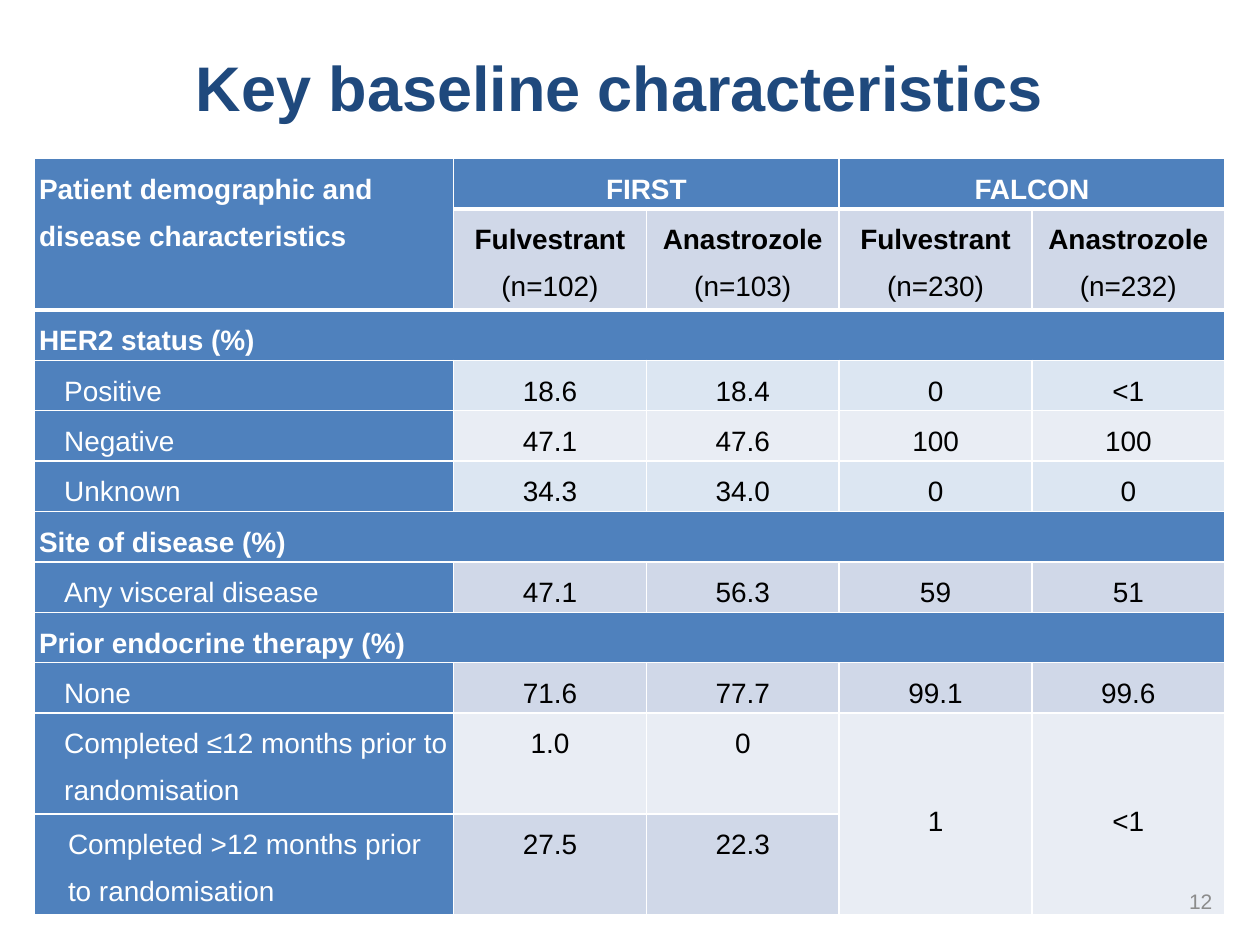
from dataclasses import dataclass

from lxml import etree
from pptx import Presentation
from pptx.dml.color import RGBColor
from pptx.enum import text as t
from pptx.oxml import ns
from pptx.util import Inches, Pt

WHITE = RGBColor(0xFF, 0xFF, 0xFF)
BLACK = RGBColor(0, 0, 0)
NAVY = RGBColor(0x1F, 0x49, 0x7D)
GREY = RGBColor(0x8C, 0x8C, 0x8C)
BLUE = RGBColor(0x4F, 0x81, 0xBD)
MIST = RGBColor(0xD0, 0xD8, 0xE8)
PALE = RGBColor(0xE9, 0xED, 0xF4)
SKY = RGBColor(0xDC, 0xE6, 0xF2)

LEFT, CENTER, RIGHT = t.PP_ALIGN.LEFT, t.PP_ALIGN.CENTER, t.PP_ALIGN.RIGHT
TOP, MIDDLE = t.MSO_ANCHOR.TOP, t.MSO_ANCHOR.MIDDLE

COLUMN_WIDTHS = [3.33] + [1.53] * 4
HEADER_ROWS = 2


@dataclass
class Section:
    heading: str


@dataclass
class Measure:
    label: str
    values: list[str]
    fill: RGBColor
    height: float = 0.39
    margin: float = 0.04


TRIALS = ["FIRST", "FALCON"]
ARMS = ["Fulvestrant\n(n=102)", "Anastrozole\n(n=103)",
        "Fulvestrant\n(n=230)", "Anastrozole\n(n=232)"]
BODY = [
    Section("HER2 status (%)"),
    Measure("Positive", ["18.6", "18.4", "0", "<1"], SKY),
    Measure("Negative", ["47.1", "47.6", "100", "100"], PALE),
    Measure("Unknown", ["34.3", "34.0", "0", "0"], SKY),
    Section("Site of disease (%)"),
    Measure("Any visceral disease", ["47.1", "56.3", "59", "51"], MIST),
    Section("Prior endocrine therapy (%)"),
    Measure("None", ["71.6", "77.7", "99.1", "99.6"], MIST, 0.4),
    Measure("Completed ≤12 months prior to randomisation", ["1.0", "0", "1", "<1"], PALE, 0.8),
    Measure("Completed >12 months prior to randomisation", ["27.5", "22.3"], MIST, 0.8, 0.07),
]


def write(frame, text: str, *, size=16, color=BLACK, bold=False, first_bold=False,
          align=LEFT, spacing=1.5, indent=0.0) -> None:
    for index, line in enumerate(text.split("\n")):
        paragraph = frame.paragraphs[0] if index == 0 else frame.add_paragraph()
        paragraph.alignment = align
        paragraph.line_spacing = spacing
        if indent:
            properties = paragraph._p.get_or_add_pPr()
            properties.set("marL", str(Inches(indent)))
            properties.set("indent", "0")
        run = paragraph.add_run()
        run.text = line
        run.font.name = "Arial"
        run.font.size = Pt(size)
        run.font.bold = bold or (first_bold and index == 0)
        run.font.color.rgb = color


def add_text(slide, left: float, top: float, width: float, height: float,
             text: str, **text_format) -> None:
    frame = slide.shapes.add_textbox(
        Inches(left), Inches(top), Inches(width), Inches(height)).text_frame
    frame.word_wrap = True
    frame.vertical_anchor = MIDDLE
    write(frame, text, **text_format)


def add_border(cell, side: str, points: float) -> None:
    line = etree.SubElement(cell._tc.get_or_add_tcPr(), ns.qn(f"a:ln{side}"), w=str(Pt(points)))
    solid = etree.SubElement(line, ns.qn("a:solidFill"))
    etree.SubElement(solid, ns.qn("a:srgbClr"), val=str(WHITE))


def style_grid(table) -> None:
    for row in range(len(table.rows)):
        for column in range(len(COLUMN_WIDTHS)):
            cell = table.cell(row, column)
            above = 3 if row in (1, HEADER_ROWS) else 1
            below = 3 if row < HEADER_ROWS else 1
            for side, points in (("L", 1), ("R", 1), ("T", above), ("B", below)):
                add_border(cell, side, points)


def fill_cell(cell, text: str, fill: RGBColor, *, margin=0.04, anchor=TOP, **text_format) -> None:
    cell.fill.solid()
    cell.fill.fore_color.rgb = fill
    cell.margin_left = cell.margin_right = Inches(margin)
    cell.margin_top = cell.margin_bottom = 0
    cell.vertical_anchor = anchor
    write(cell.text_frame, text, **text_format)


def fill_header(table) -> None:
    corner = table.cell(0, 0)
    corner.merge(table.cell(1, 0))
    fill_cell(corner, "Patient demographic and disease characteristics", BLUE,
              color=WHITE, bold=True)
    for index, trial in enumerate(TRIALS):
        column = 1 + 2 * index
        trial_cell = table.cell(0, column)
        trial_cell.merge(table.cell(0, column + 1))
        fill_cell(trial_cell, trial, BLUE, color=WHITE, bold=True, align=CENTER)
    for column, arm in enumerate(ARMS, 1):
        fill_cell(table.cell(1, column), arm, MIST, first_bold=True, align=CENTER)


def fill_body(table) -> None:
    for row, entry in enumerate(BODY, HEADER_ROWS):
        label = table.cell(row, 0)
        if isinstance(entry, Section):
            label.merge(table.cell(row, len(COLUMN_WIDTHS) - 1))
            fill_cell(label, entry.heading, BLUE, color=WHITE, bold=True)
            continue
        fill_cell(label, entry.label, BLUE, margin=entry.margin, color=WHITE, indent=0.2)
        for column, value in enumerate(entry.values, 1):
            cell = table.cell(row, column)
            anchor = MIDDLE if cell.is_merge_origin else TOP
            fill_cell(cell, value, entry.fill, margin=entry.margin, anchor=anchor, align=CENTER)


def add_characteristics(slide) -> None:
    heights = [0.4, 0.8] + [getattr(entry, "height", 0.4) for entry in BODY]
    table = slide.shapes.add_table(
        len(heights), len(COLUMN_WIDTHS), Inches(0.27), Inches(1.26),
        Inches(sum(COLUMN_WIDTHS)), Inches(sum(heights))).table
    table.first_row = table.horz_banding = False
    for column, width in zip(table.columns, COLUMN_WIDTHS):
        column.width = Inches(width)
    for row, height in zip(table.rows, heights):
        row.height = Inches(height)
    style_grid(table)
    last = len(heights) - 1
    for column in (3, 4):
        table.cell(last - 1, column).merge(table.cell(last, column))
    fill_header(table)
    fill_body(table)


def main() -> None:
    deck = Presentation()
    deck.slide_width, deck.slide_height = Inches(10), Inches(7.5)
    slide = deck.slides.add_slide(deck.slide_layouts[6])
    add_text(slide, 0.19, 0.21, 9.45, 1.03, "Key baseline characteristics",
             size=36, color=NAVY, bold=True, align=CENTER, spacing=0.9)
    add_characteristics(slide)
    add_text(slide, 7.47, 6.95, 2.25, 0.4, "12", size=12, color=GREY, align=RIGHT, spacing=1.0)
    deck.save("out.pptx")


if __name__ == "__main__":
    main()
